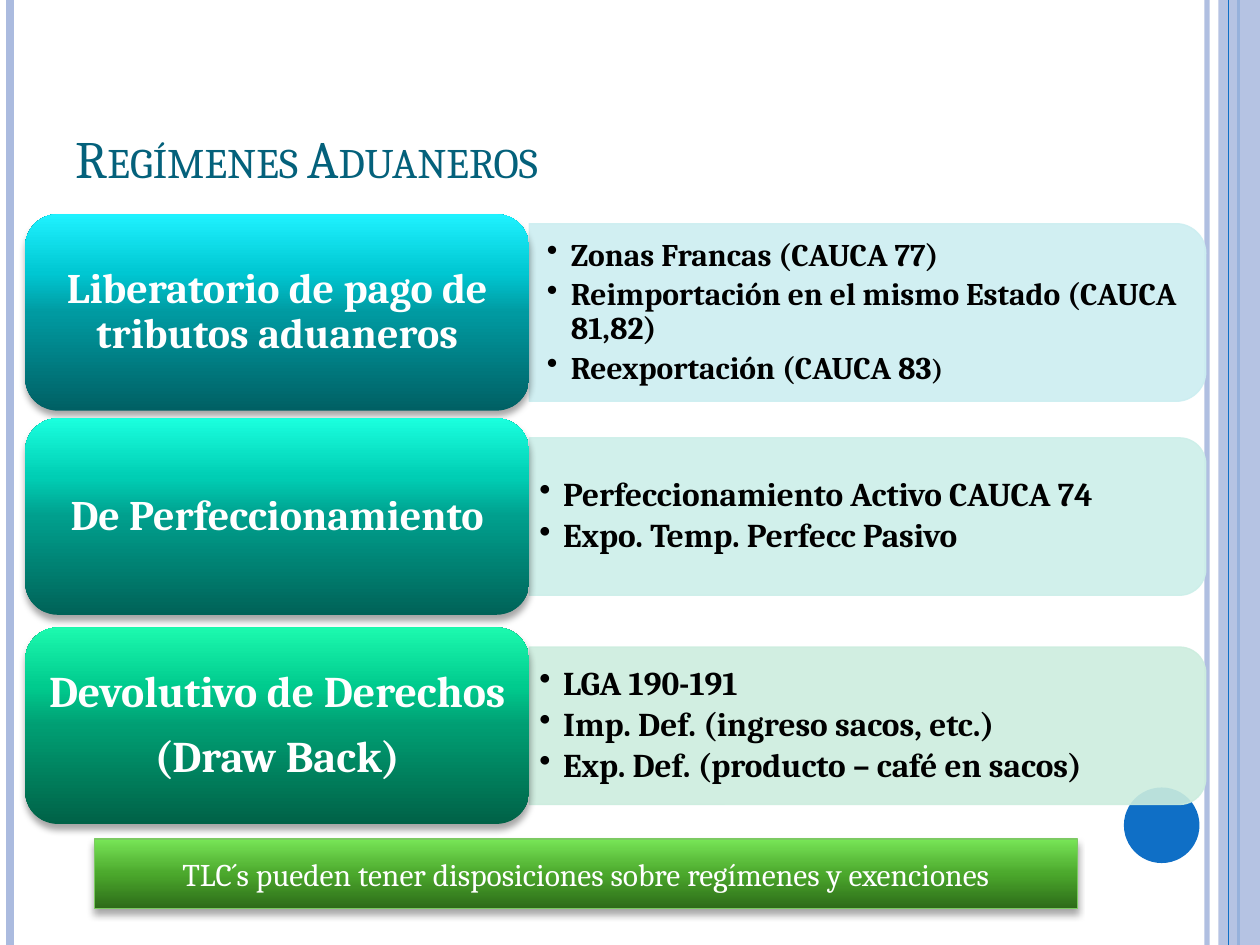
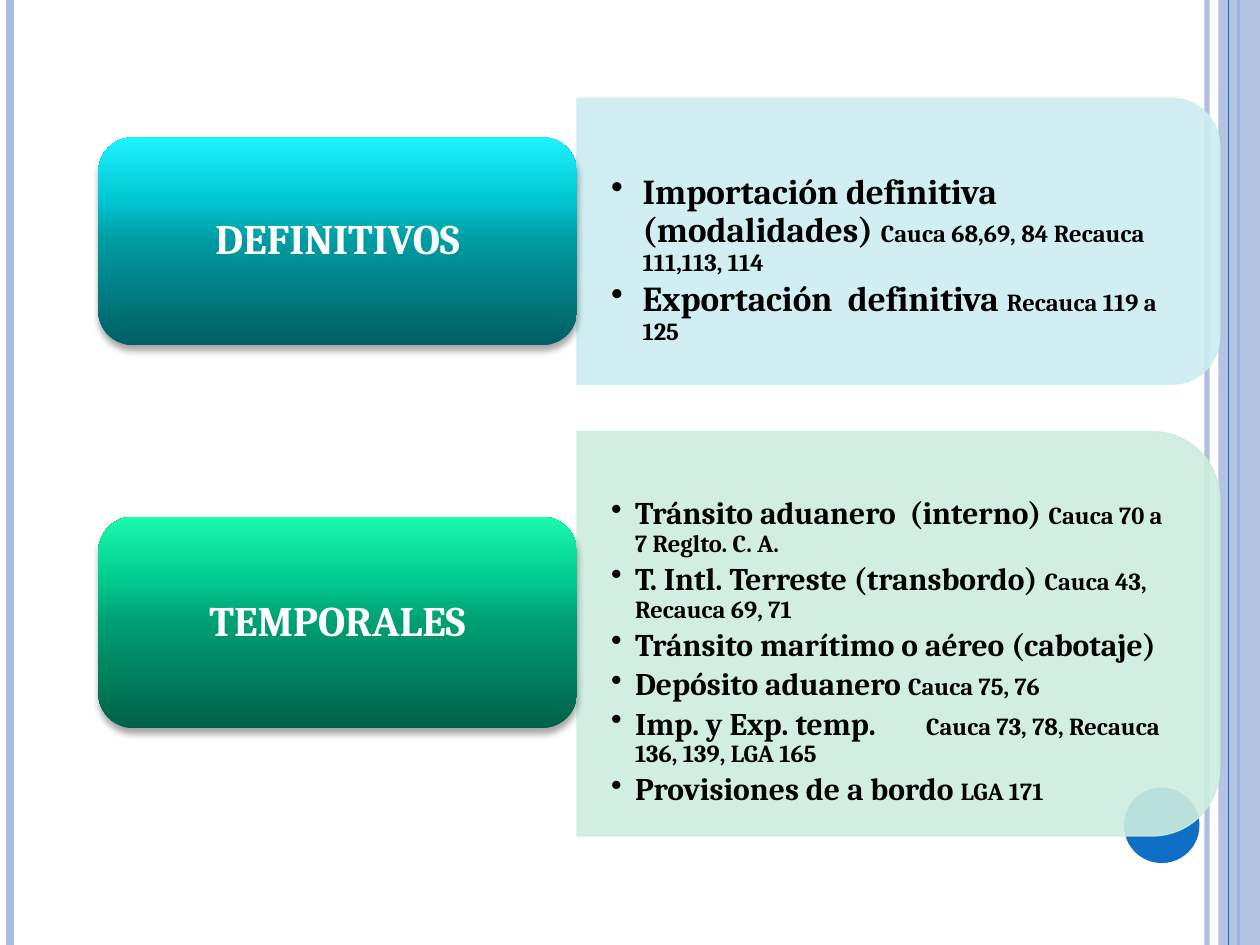
from lxml.etree import SubElement
from pptx import Presentation
from pptx.dml.color import RGBColor
from pptx.enum.shapes import MSO_CONNECTOR, MSO_SHAPE
from pptx.enum.text import MSO_ANCHOR, PP_ALIGN
from pptx.oxml.ns import qn
from pptx.util import Inches, Pt

FONT = "Cambria"
WHITE = RGBColor(0xFF, 0xFF, 0xFF)
BLACK = RGBColor(0x00, 0x00, 0x00)
TITLE_TEAL = RGBColor(0x04, 0x61, 0x7B)
LAVENDER = RGBColor(0xAB, 0xBB, 0xDF)
BLUE = RGBColor(0x0F, 0x6F, 0xC6)
BAR_LINE = RGBColor(0x7C, 0xCA, 0x62)

STOP_PERCENTS = (0, 50, 70, 100)
CYAN_STOPS = ("006064", "009AA1", "00C7D2", "1FF2FF")
TURQUOISE_STOPS = ("006358", "009F8D", "00CEB4", "1AFFDE")
EMERALD_STOPS = ("006247", "009E73", "00CB8E", "1CF9AE")
GREEN_STOPS = ("2D6B19", "4BA82C", "5DBF3D", "78E657")

# Card gradient and panel tint for each theme
CYAN = (CYAN_STOPS, RGBColor(0xCC, 0xEE, 0xF1))
TURQUOISE = (TURQUOISE_STOPS, RGBColor(0xCC, 0xEF, 0xE9))
EMERALD = (EMERALD_STOPS, RGBColor(0xCC, 0xED, 0xDE))

SLIDE_HEIGHT = 7.5
CORNER_INSET = 0.05  # share of a panel's height taken by its rounded corner

RELIEF_ROWS = [
    {"theme": CYAN, "card_top": 1.7, "card_size": 24, "panel_height": 1.41,
     "margin": 0.14,
     "card_lines": ["Liberatorio de pago de tributos aduaneros"],
     "items": [[("Zonas Francas (CAUCA 77)", 18)],
               [("Reimportación en el mismo Estado (CAUCA 81,82)", 18)],
               [("Reexportación (CAUCA 83", 18), (")", 16)]]},
    {"theme": TURQUOISE, "card_top": 3.32, "card_size": 24, "panel_height": 1.25,
     "margin": 0.08,
     "card_lines": ["De Perfeccionamiento"],
     "items": [[("Perfeccionamiento Activo CAUCA 74", 19)],
               [("Expo. Temp. Perfecc Pasivo", 19)]]},
    {"theme": EMERALD, "card_top": 4.98, "card_size": 25, "panel_height": 1.25,
     "margin": 0.08,
     "card_lines": ["Devolutivo de Derechos", "(Draw Back)"],
     "items": [[("LGA 190-191", 19)],
               [("Imp. Def. (ingreso sacos, etc.)", 19)],
               [("Exp. Def. (producto – café en sacos)", 19)]]},
]

DURATION_ROWS = [
    {"theme": CYAN, "card_top": 1.09, "card_height": 1.65, "card_size": 24,
     "panel_height": 2.27, "margin": 0.27, "top_gap": 0.3, "indent": 0.25,
     "card_lines": ["DEFINITIVOS"],
     "items": [[("Importación definitiva (modalidades) ", 20),
                ("Cauca 68,69, 84 Recauca 111,113, 114", 14)],
               [("Exportación  definitiva ", 20), ("Recauca 119 a 125", 14)]]},
    {"theme": EMERALD, "card_top": 4.1, "card_height": 1.68, "card_size": 24,
     "panel_height": 3.21, "panel_shift": 0.09, "margin": 0.27, "top_gap": 0.3,
     "card_lines": ["TEMPORALES"],
     "items": [[("Tránsito aduanero  (interno) ", 18),
                ("Cauca 70 a 7 Reglto. C. A.", 14)],
               [("T. Intl. Terreste (transbordo) ", 18),
                ("Cauca 43, Recauca 69, 71", 14)],
               [("Tránsito marítimo o aéreo (cabotaje)", 18)],
               [("Depósito aduanero ", 18), ("Cauca 75, 76", 14)],
               [("Imp. y Exp. temp. \t", 18),
                ("Cauca 73, 78, Recauca 136, 139, LGA 165", 14)],
               [("Provisiones de a bordo ", 18), ("LGA 171", 14)]]},
]


def set_all(target, values):
    for name, value in values.items():
        setattr(target, name, value)


def set_opacity(element, percent):
    """Make every solid colour inside the element partly transparent."""
    for color in element.iter(qn("a:srgbClr")):
        SubElement(color, qn("a:alpha"), val=str(percent * 1000))


def add_rule(page, x, color, width, opacity=100):
    rule = page.shapes.add_connector(MSO_CONNECTOR.STRAIGHT, Inches(x), 0,
                                     Inches(x), Inches(SLIDE_HEIGHT))
    rule.line.color.rgb = color
    rule.line.width = Pt(width)
    if opacity < 100:
        set_opacity(rule.line._ln, opacity)
    SubElement(rule._element.spPr, qn("a:effectLst"))


def add_flat_shape(page, kind, box, color=None):
    shape = page.shapes.add_shape(kind, *map(Inches, box))
    shape.shadow.inherit = False
    shape.line.fill.background()
    if color is not None:
        shape.fill.solid()
        shape.fill.fore_color.rgb = color
    return shape


def add_glossy_shape(page, kind, box, stops):
    """Add a shape with a vertical gradient and a soft shadow below it."""
    shape = add_flat_shape(page, kind, box)
    shape.fill.gradient()
    shape.fill.gradient_angle = 90
    properties = shape._element.spPr
    stop_list = properties.find(qn("a:gradFill")).find(qn("a:gsLst"))
    stop_list.clear()
    for percent, color in zip(STOP_PERCENTS, stops):
        stop = SubElement(stop_list, qn("a:gs"), pos=str(percent * 1000))
        SubElement(stop, qn("a:srgbClr"), val=color)
    shadow = SubElement(properties.find(qn("a:effectLst")), qn("a:outerShdw"),
                        blurRad=str(Pt(4)), dist=str(Pt(3)), dir="5400000",
                        rotWithShape="0")
    SubElement(shadow, qn("a:srgbClr"), val="000000")
    set_opacity(shadow, 35)
    return shape


def write(frame, paragraphs, font, layout, anchor=MSO_ANCHOR.MIDDLE, margins=(0.1, 0.05, 0.1, 0.05)):
    """Fill a frame; each paragraph is a list of (text, size) spans."""
    left, top, right, bottom = map(Inches, margins)
    set_all(frame, {"word_wrap": True, "vertical_anchor": anchor,
                    "margin_left": left, "margin_top": top,
                    "margin_right": right, "margin_bottom": bottom})
    for index, spans in enumerate(paragraphs):
        para = frame.add_paragraph() if index else frame.paragraphs[0]
        set_all(para, layout)
        for text, size in spans:
            span = para.add_run()
            span.text = text
            set_all(span.font, {"name": FONT, "size": Pt(size),
                                "bold": font.get("bold", False)})
            span.font.color.rgb = font["color"]


def add_bullets(frame, indent):
    for para in frame.paragraphs:
        properties = para._p.get_or_add_pPr()
        properties.set("marL", str(Inches(indent)))
        properties.set("indent", str(-Inches(indent)))
        SubElement(properties, qn("a:buChar"), char="•")


def add_backdrop(page):
    add_rule(page, 9.58, LAVENDER, 3, 93)
    add_rule(page, 0.08, LAVENDER, 4.5)
    add_rule(page, 9.83, BLUE, 1.5)
    band = add_flat_shape(page, MSO_SHAPE.RECTANGLE,
                          (9.67, 0, 0.33, SLIDE_HEIGHT), LAVENDER)
    set_opacity(band._element.spPr, 87)
    add_rule(page, 9.75, BLUE, 0.75)
    add_flat_shape(page, MSO_SHAPE.OVAL, (8.92, 6.25, 0.6, 0.6), BLUE)


def add_panel(page, box, tint, row):
    """Add a tinted panel, rounded on its right side, with a bulleted list."""
    left, top, width, height = box
    turned_box = (left + (width - height) / 2, top + (height - width) / 2,
                  height, width)
    panel = add_flat_shape(page, MSO_SHAPE.ROUND_2_SAME_RECTANGLE, turned_box, tint)
    panel.rotation = 90
    panel.line.color.rgb = tint
    panel.line.width = Pt(0.75)
    set_opacity(panel._element.spPr, 90)

    inset = height * CORNER_INSET
    text_box = (left, top + inset, width - inset, height - 2 * inset)
    frame = page.shapes.add_textbox(*map(Inches, text_box)).text_frame
    margin = row["margin"]
    write(frame, row["items"], {"color": BLACK, "bold": True},
          {"line_spacing": 0.9, "space_after": Pt(3)},
          margins=(margin, margin / 2 + row.get("top_gap", 0), margin, margin / 2))
    add_bullets(frame, row.get("indent", 0.19))


def add_row(page, row, left, card_width, panel_width):
    """Add a card and, centred on its right side, the panel that details it."""
    stops, tint = row["theme"]
    card_top, card_height = row["card_top"], row.get("card_height", 1.56)
    panel_height = row["panel_height"]
    panel_top = (card_top + (card_height - panel_height) / 2
                 + row.get("panel_shift", 0))
    add_panel(page, (left + card_width, panel_top, panel_width, panel_height),
              tint, row)
    card = add_glossy_shape(page, MSO_SHAPE.ROUNDED_RECTANGLE,
                            (left, card_top, card_width, card_height), stops)
    write(card.text_frame, [[(line, row["card_size"])] for line in row["card_lines"]],
          {"color": WHITE, "bold": True},
          {"alignment": PP_ALIGN.CENTER, "line_spacing": 0.9, "space_after": Pt(10)},
          margins=(0.05, 0.05, 0.05, 0.05))


def add_title(page, text):
    frame = page.shapes.add_textbox(*map(Inches, (0.5, 0.3, 8.17, 1.25))).text_frame
    write(frame, [[(text, 30)]], {"color": TITLE_TEAL}, {}, MSO_ANCHOR.BOTTOM)
    frame.paragraphs[0].runs[0].font._element.set("cap", "small")


def add_note_bar(page, text):
    bar = add_glossy_shape(page, MSO_SHAPE.RECTANGLE, (0.75, 6.66, 7.8, 0.55),
                           GREEN_STOPS)
    bar.line.color.rgb = BAR_LINE
    bar.line.width = Pt(0.75)
    write(bar.text_frame, [[(text, 18)]], {"color": WHITE},
          {"alignment": PP_ALIGN.CENTER})


def add_page(deck, rows, left, card_width, panel_width):
    page = deck.slides.add_slide(deck.slide_layouts[6])
    add_backdrop(page)
    for row in rows:
        add_row(page, row, left, card_width, panel_width)
    return page


def main():
    deck = Presentation()
    deck.slide_width = Inches(10)
    deck.slide_height = Inches(SLIDE_HEIGHT)
    relief_page = add_page(deck, RELIEF_ROWS, 0.2, 4, 5.37)
    add_title(relief_page, "Regímenes Aduaneros")
    add_note_bar(relief_page,
                 "TLC´s pueden tener disposiciones sobre regímenes y exenciones")
    add_page(deck, DURATION_ROWS, 0.78, 3.8, 5.1)
    deck.save("out.pptx")


if __name__ == "__main__":
    main()
